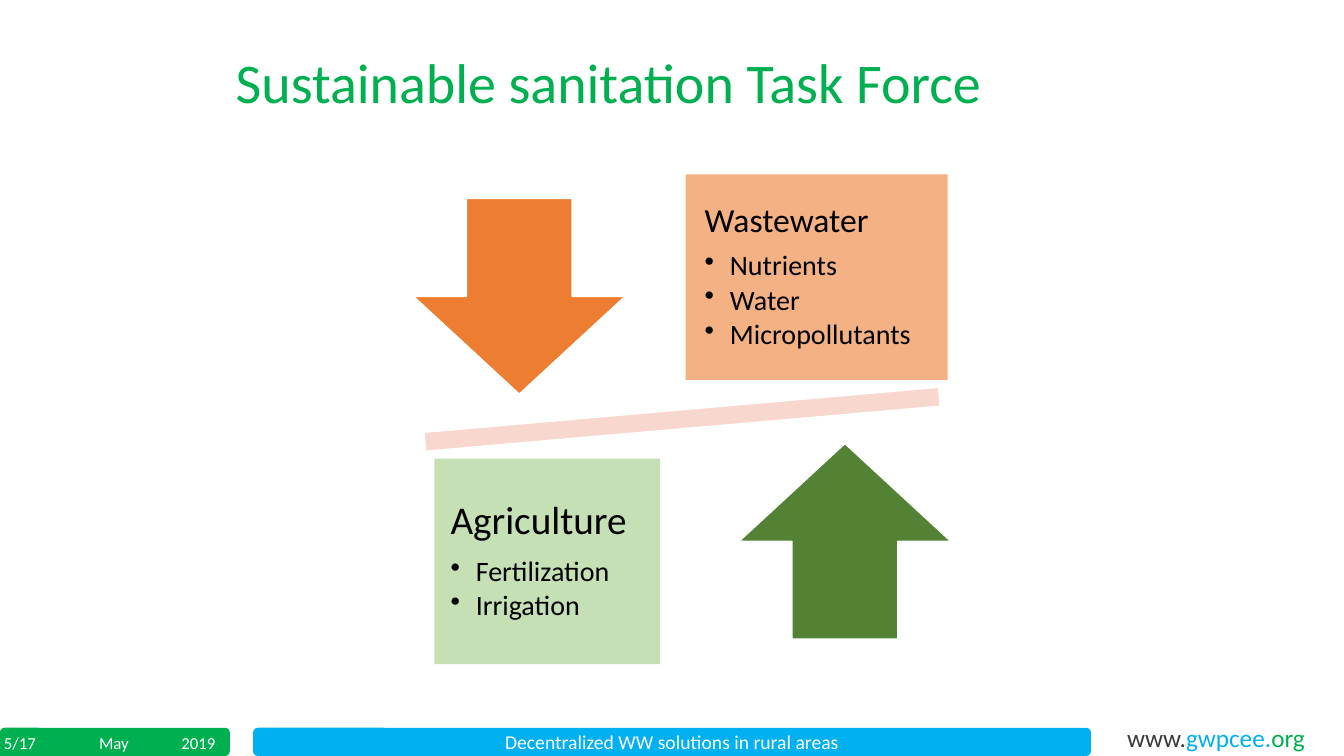
from dataclasses import dataclass

from lxml import etree
from pptx import Presentation
from pptx import util as u
from pptx.dml.color import RGBColor
from pptx.enum import shapes, text
from pptx.oxml.ns import qn

SHAPE = shapes.MSO_SHAPE
FONT = "Calibri"
WHITE, GREEN, BLUE = "FFFFFF", "00B050", "00B0F0"

prs = Presentation()
prs.slide_width, prs.slide_height = u.Inches(13.33), u.Inches(7.5)
s = prs.slides.add_slide(prs.slide_layouts[6])


@dataclass
class Area:
    """Place and size in percent of the slide's width and height."""
    x: float
    y: float
    w: float
    h: float

    def emu(self) -> list[int]:
        sides = (prs.slide_width, prs.slide_height) * 2
        shares = (self.x, self.y, self.w, self.h)
        return [round(side * share / 100) for side, share in zip(sides, shares)]


@dataclass
class Block:
    kind: SHAPE
    area: Area
    fill: str
    outlined: bool = False
    rotation: float = 0


@dataclass
class Label:
    area: Area
    wordings: list[tuple[str, str]]  # wording and colour
    size: int
    wrap: bool = True
    middle: bool = False
    centred: bool = False
    spacing: float = 1.0


@dataclass
class Topic:
    area: Area
    fill: str
    heading: str
    size: int
    inset: float
    items: list[str]


def rgb(colour: str) -> RGBColor:
    return RGBColor.from_string(colour)


def set_font(r, size: int, colour: str) -> None:
    r.font.name, r.font.size = FONT, u.Pt(size)
    r.font.color.rgb = rgb(colour)


def draw_block(b: Block):
    sp = s.shapes.add_shape(b.kind, *b.area.emu())
    sp.shadow.inherit = False
    sp.rotation = b.rotation
    sp.fill.solid()
    sp.fill.fore_color.rgb = rgb(b.fill)
    if b.outlined:
        sp.line.color.rgb = rgb(WHITE)
        sp.line.width = u.Pt(1)
    else:
        sp.line.fill.background()
    return sp


def draw_label(label: Label) -> None:
    tf = s.shapes.add_textbox(*label.area.emu()).text_frame
    tf.word_wrap = label.wrap
    if label.middle:
        tf.vertical_anchor = text.MSO_ANCHOR.MIDDLE
    p = tf.paragraphs[0]
    p.line_spacing = label.spacing
    if label.centred:
        p.alignment = text.PP_ALIGN.CENTER
    for wording, colour in label.wordings:
        r = p.add_run()
        r.text = wording
        set_font(r, label.size, colour)


def add_bullet(p) -> None:
    pPr = p._p.get_or_add_pPr()
    pPr.set("marL", str(u.Inches(0.25)))
    pPr.set("indent", str(-u.Inches(0.25)))
    etree.SubElement(pPr, qn("a:buChar")).set("char", "•")


def draw_topic(topic: Topic) -> None:
    sp = draw_block(Block(SHAPE.RECTANGLE, topic.area, topic.fill))
    tf = sp.text_frame
    tf.word_wrap = True
    tf.vertical_anchor = text.MSO_ANCHOR.MIDDLE
    tf.margin_left = tf.margin_right = u.Inches(topic.inset)
    tf.margin_top = tf.margin_bottom = u.Inches(topic.inset)
    tf.text = "\n".join([topic.heading, *topic.items])
    for i, p in enumerate(tf.paragraphs):
        size, gap = (20, 0.15) if i else (topic.size, 0.35)
        if i:
            add_bullet(p)
            p.level = 1
        p.alignment = text.PP_ALIGN.LEFT
        p.line_spacing = 0.9
        p.space_after = u.Pt(round(size * gap))
        set_font(p.runs[0], size, "000000")


# Footer
FOOT, FOOT_H = 96.27, 3.73
banner = Area(18.83, FOOT, 62.34, FOOT_H)
for block in (
    Block(SHAPE.ROUNDED_RECTANGLE, Area(0, FOOT, 17.1, FOOT_H), GREEN),
    Block(SHAPE.ROUNDED_RECTANGLE, banner, BLUE),
    Block(SHAPE.RECTANGLE, Area(0, 96.67, 3.9, 3.33), GREEN),
):
    draw_block(block)

# Title and footer wording
for label in (
    Label(banner, [("Decentralized WW solutions in rural areas", WHITE)], 14,
          middle=True, centred=True),
    Label(Area(4.58, FOOT, 7.8, 4), [("May", WHITE)], 12, middle=True, centred=True),
    Label(Area(12.75, FOOT, 4.35, 4), [("2019", WHITE)], 12),
    Label(Area(-0.45, FOOT, 5.55, 4), [("5/17", WHITE)], 12),
    Label(Area(83.12, 94.93, 14.93, 5.33),
          [("www.", "3B3838"), ("gwpcee.", BLUE), ("org", GREEN)], 18, wrap=False),
    Label(Area(16.8, 6.67, 61.14, 16.4),
          [("Sustainable sanitation Task Force", GREEN)], 40, spacing=0.9),
):
    draw_label(label)

# Balance bar and arrows
ARROW_W, ARROW_H = 15.75, 25.87
for block in (
    Block(SHAPE.MATH_MINUS, Area(24.61, 50.13, 52.29, 10.67), "F8D7CE", True, 355),
    Block(SHAPE.DOWN_ARROW, Area(30.76, 26.27, ARROW_W, ARROW_H), "ED7D31", True),
    Block(SHAPE.UP_ARROW, Area(54.99, 58.67, ARROW_W, ARROW_H), "548235", True),
):
    draw_block(block)

# Topics on either side of the bar
TOPIC_H = 27.2
for topic in (
    Topic(Area(51.01, 23.07, 19.5, TOPIC_H), "F4B183", "Wastewater", 24, 0.19,
          ["Nutrients", "Water", "Micropollutants"]),
    Topic(Area(32.33, 60.67, 16.8, TOPIC_H), "C5E0B4", "Agriculture", 28, 0.16,
          ["Fertilization", "Irrigation"]),
):
    draw_topic(topic)

prs.save("out.pptx")
